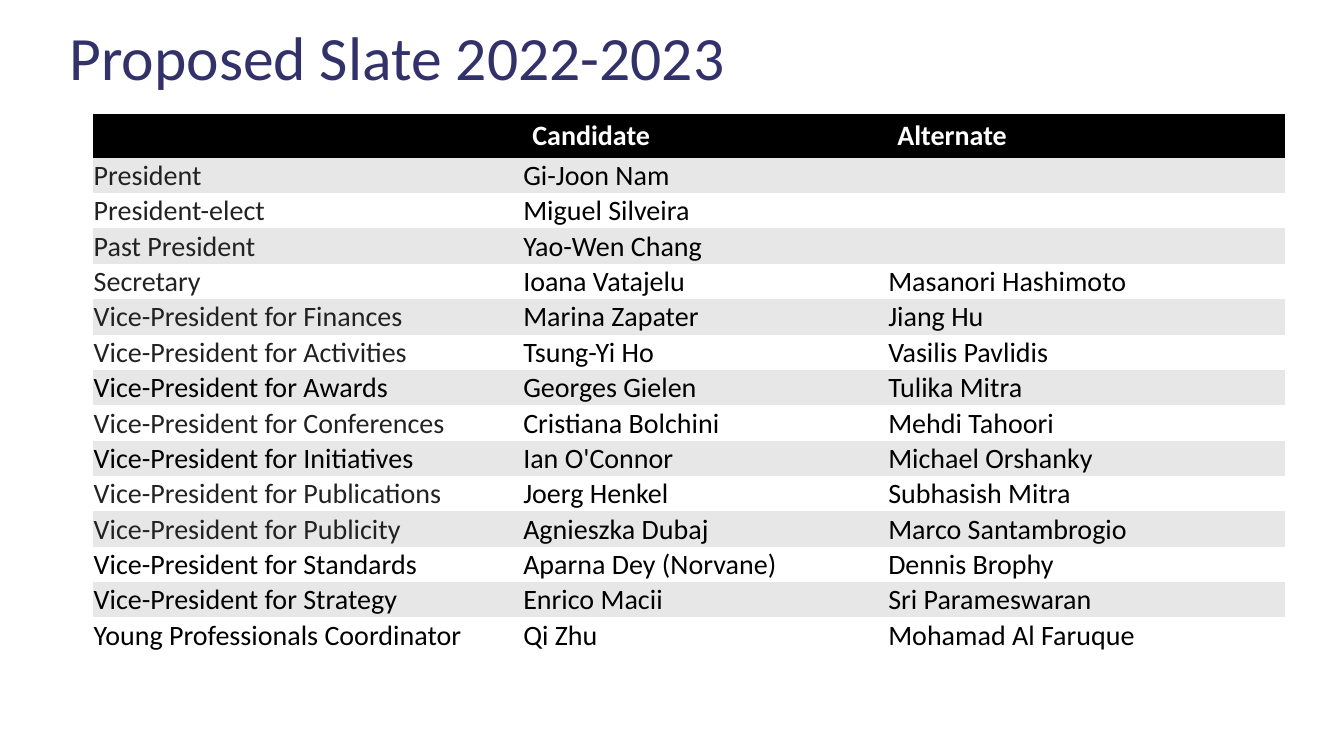
from pptx import Presentation
from pptx.dml.color import RGBColor as RGB
from pptx.enum.text import MSO_ANCHOR as ANCHOR
from pptx.util import Inches, Pt

COLORS = {
    "title": "32316A", "head": "000000", "head_text": "FFFFFF",
    "band": "E7E7E7", "plain": "FFFFFF", "text": "000000", "role": "222222",
}
HEADER = ["", "Candidate", "Alternate"]
SLATE = [
    ("President", "Gi-Joon Nam", ""),
    ("President-elect", "Miguel Silveira", ""),
    ("Past President", "Yao-Wen Chang", ""),
    ("Secretary", "Ioana Vatajelu", "Masanori Hashimoto"),
    ("Vice-President for Finances", "Marina Zapater", "Jiang Hu"),
    ("Vice-President for Activities", "Tsung-Yi Ho", "Vasilis Pavlidis"),
    ("Vice-President for Awards", "Georges Gielen", "Tulika Mitra"),
    ("Vice-President for Conferences", "Cristiana Bolchini", "Mehdi Tahoori"),
    ("Vice-President for Initiatives", "Ian O'Connor", "Michael Orshanky"),
    ("Vice-President for Publications", "Joerg Henkel", "Subhasish Mitra"),
    ("Vice-President for Publicity", "Agnieszka Dubaj", "Marco Santambrogio"),
    ("Vice-President for Standards", "Aparna Dey (Norvane)", "Dennis Brophy"),
    ("Vice-President for Strategy", "Enrico Macii", "Sri Parameswaran"),
    ("Young Professionals Coordinator", "Qi Zhu", "Mohamad Al Faruque"),
]
BLACK_ROLES = {"Awards", "Initiatives", "Standards", "Strategy", "Coordinator"}
NO_STYLE = "{2D5ABB26-0587-4C30-8999-92F81FD0307C}"


class SlideBuilder:
    """Draws styled elements on one slide, with lengths in percent of its size."""

    font = "Calibri"

    def __init__(self, prs):
        self.prs = prs
        self.s = prs.slides.add_slide(prs.slide_layouts[6])

    def x(self, share):
        return int(self.prs.slide_width * share / 100)

    def y(self, share):
        return int(self.prs.slide_height * share / 100)

    def run(self, p, text, size, color, bold=False):
        r = p.add_run()
        r.text = text
        r.font.name, r.font.size, r.font.bold = self.font, Pt(size), bold
        r.font.color.rgb = RGB.from_string(COLORS[color])

    def title(self, text, left, top, width, height):
        sp = self.s.shapes.add_textbox(self.x(left), self.y(top), self.x(width), self.y(height))
        tf = sp.text_frame
        tf.word_wrap = True
        tf.vertical_anchor = ANCHOR.MIDDLE
        p = tf.paragraphs[0]
        p.line_spacing = 0.9
        self.run(p, text, 44, "title")

    def cell(self, cell, text, fill, color, bold=False):
        cell.fill.solid()
        cell.fill.fore_color.rgb = RGB.from_string(COLORS[fill])
        if text:
            self.run(cell.text_frame.paragraphs[0], text, 20, color, bold)

    def table(self, header, rows, left, top, widths, head_height, row_height):
        height = head_height + row_height * len(rows)
        frame = self.s.shapes.add_table(len(rows) + 1, len(header), self.x(left), self.y(top),
                                        self.x(sum(widths)), self.y(height))
        tbl = frame.table
        tbl.horz_banding = False
        tbl._tbl.tblPr[0].text = NO_STYLE
        for col, width in zip(tbl.columns, widths):
            col.width = self.x(width)
        for i, row in enumerate(tbl.rows):
            row.height = self.y(row_height if i else head_height)
        for c, text in enumerate(header):
            self.cell(tbl.cell(0, c), text, "head", "head_text", True)
        for i, names in enumerate(rows, 1):
            black = names[0].split()[-1] in BLACK_ROLES
            for c, text in enumerate(names):
                cell = tbl.cell(i, c)
                cell.margin_left = cell.margin_right = cell.margin_top = Inches(0.01)
                cell.margin_bottom = 0
                cell.vertical_anchor = ANCHOR.BOTTOM if c else ANCHOR.MIDDLE
                self.cell(cell, text, "band" if i % 2 else "plain",
                          "text" if c or black else "role")


def main():
    prs = Presentation()
    prs.slide_width, prs.slide_height = Inches(13.33), Inches(7.5)
    slide = SlideBuilder(prs)
    slide.title("Proposed Slate 2022-2023", 4.43, 1.07, 86.72, 14)
    slide.table(HEADER, SLATE, 6.9, 15.07, [31.96, 27.16, 29.56], 5.8, 4.68)
    prs.save("out.pptx")


if __name__ == "__main__":
    main()
